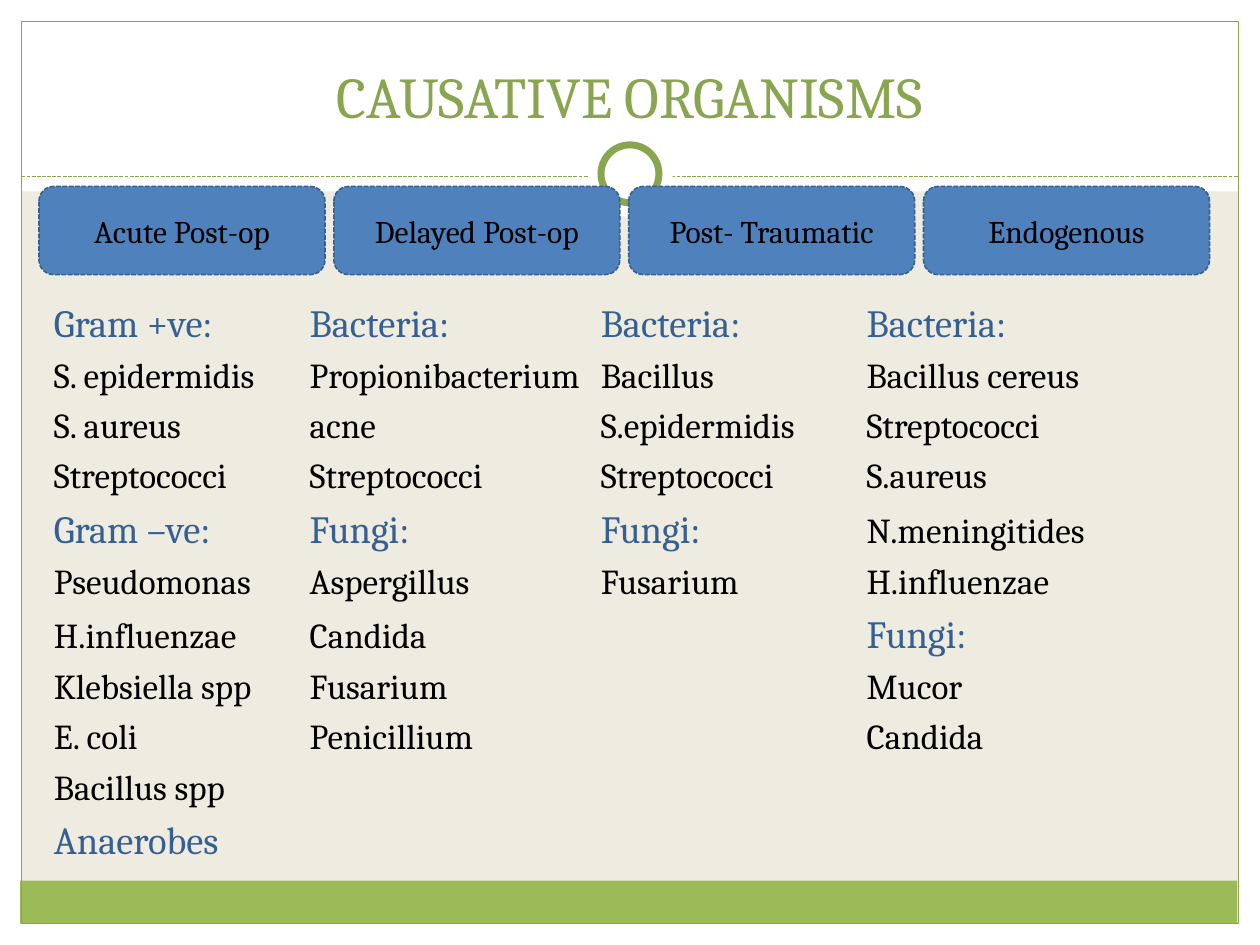
from lxml import etree
from pptx import Presentation
from pptx.dml.color import RGBColor
from pptx.enum.dml import MSO_LINE
from pptx.enum.shapes import MSO_CONNECTOR, MSO_SHAPE as Shape
from pptx.enum.text import MSO_ANCHOR as Anchor, PP_ALIGN as Align
from pptx.oxml.ns import qn
from pptx.util import Inches, Pt

GREEN, BAR_GREEN, BLUE = "89A54F", "9BBB59", "4F81BD"
EDGE_BLUE, HEADING_BLUE = "3A5F8C", "376092"
WHITE, BLACK, CREAM = "FFFFFF", "000000", "EEECE1"

CATEGORIES = ["Acute Post-op", "Delayed Post-op", "Post- Traumatic", "Endogenous"]
ORGANISMS = [
    ["Gram +ve:", "Bacteria:", "Bacteria:", "Bacteria:"],
    ["S. epidermidis", "Propionibacterium", "Bacillus", "Bacillus cereus"],
    ["S. aureus", "acne", "S.epidermidis", "Streptococci"],
    ["Streptococci", "Streptococci", "Streptococci", "S.aureus"],
    ["Gram –ve:", "Fungi:", "Fungi:", "N.meningitides"],
    ["Pseudomonas", "Aspergillus", "Fusarium", "H.influenzae"],
    ["H.influenzae", "Candida", "", "Fungi:"],
    ["Klebsiella spp", "Fusarium", "", "Mucor"],
    ["E. coli", "Penicillium", "", "Candida"],
    ["Bacillus spp"],
    ["Anaerobes"],
]
COLUMN_STOPS = [2.03, 4.34, 6.45]


def color(hex_code):
    return RGBColor.from_string(hex_code)


def is_heading(entry):
    return entry.endswith(":") or entry == "Anaerobes"


class SlideBuilder:
    font = "Cambria"

    def __init__(self, page):
        self.page = page
        page.background.fill.solid()
        page.background.fill.fore_color.rgb = color(CREAM)

    def stroke(self, line, hex_code, width, dashed=False):
        line.color.rgb = color(hex_code)
        line.width = Pt(width)
        if dashed:
            line.dash_style = MSO_LINE.SQUARE_DOT

    def shape(self, kind, left, top, width, height, fill=None):
        """Add a preset shape without shadow or outline."""
        shape = self.page.shapes.add_shape(
            kind, Inches(left), Inches(top), Inches(width), Inches(height))
        shape.shadow.inherit = False
        shape.line.fill.background()
        if fill:
            shape.fill.solid()
            shape.fill.fore_color.rgb = color(fill)
        else:
            shape.fill.background()
        return shape

    def dashed_line(self, left, right, y):
        line = self.page.shapes.add_connector(
            MSO_CONNECTOR.STRAIGHT, Inches(left), Inches(y), Inches(right), Inches(y))
        self.stroke(line.line, GREEN, 0.75, dashed=True)
        etree.SubElement(line._element.spPr, qn("a:effectLst"))

    def text_box(self, left, top, width, height, anchor):
        box = self.page.shapes.add_textbox(
            Inches(left), Inches(top), Inches(width), Inches(height))
        box.text_frame.word_wrap = True
        box.text_frame.vertical_anchor = anchor
        return box.text_frame

    def span(self, para, text, size, hex_code):
        span = para.add_run()
        span.text = text
        span.font.name = self.font
        span.font.size = Pt(size)
        span.font.color.rgb = color(hex_code)

    def title(self, text):
        frame = self.text_box(0.33, 0.25, 9.33, 0.83, Anchor.BOTTOM)
        para = frame.paragraphs[0]
        para.alignment = Align.CENTER
        self.span(para, text, 33, GREEN)

    def category(self, text, left):
        label = self.shape(Shape.ROUNDED_RECTANGLE, left, 1.48, 2.27, 0.7, BLUE)
        self.stroke(label.line, EDGE_BLUE, 0.9, dashed=True)
        label.text_frame.vertical_anchor = Anchor.MIDDLE
        para = label.text_frame.paragraphs[0]
        para.alignment = Align.CENTER
        self.span(para, text, 18, BLACK)

    def tab_stops(self, para, stops):
        tabs = etree.SubElement(para._p.get_or_add_pPr(), qn("a:tabLst"))
        for stop in stops:
            etree.SubElement(tabs, qn("a:tab"), pos=str(Inches(stop)), algn="l")

    def columns(self, rows, stops):
        """Set each row as one paragraph, its entries aligned on tab stops."""
        frame = self.text_box(0.33, 1.41, 9.3, 6.09, Anchor.TOP)
        frame.margin_top = Inches(0.96)
        for index, row in enumerate(rows):
            para = frame.paragraphs[0] if index == 0 else frame.add_paragraph()
            tall = any(is_heading(entry) for entry in row)
            para.space_before = Pt(0 if index == 0 else 5.2 if tall else 4.7)
            self.tab_stops(para, stops)
            for column, entry in enumerate(row):
                size, tint = (22, HEADING_BLUE) if is_heading(entry) else (20, BLACK)
                self.span(para, "\t" + entry if column else entry, size, tint)


def main():
    deck = Presentation()
    deck.slide_width, deck.slide_height = Inches(10), Inches(7.5)
    slide = SlideBuilder(deck.slides.add_slide(deck.slide_layouts[6]))

    for margin in [(0, 7.33, 10, 0.17), (0, 0, 10, 1.52),
                   (0, 0, 0.17, 7.5), (9.83, 0, 0.17, 7.5)]:
        slide.shape(Shape.RECTANGLE, *margin, WHITE)
    slide.shape(Shape.RECTANGLE, 0.16, 6.99, 9.66, 0.34, BAR_GREEN)
    border = slide.shape(Shape.RECTANGLE, 0.17, 0.17, 9.66, 7.16)
    slide.stroke(border.line, GREEN, 0.75)
    slide.dashed_line(0.17, 9.83, 1.4)
    slide.shape(Shape.OVAL, 4.67, 1.05, 0.67, 0.67, WHITE)
    ring = slide.shape(Shape.OVAL, 4.77, 1.15, 0.46, 0.46, WHITE)
    slide.stroke(ring.line, GREEN, 4)

    slide.title("CAUSATIVE ORGANISMS")
    slide.columns(ORGANISMS, COLUMN_STOPS)
    for index, name in enumerate(CATEGORIES):
        slide.category(name, 0.31 + index * 2.34)
    deck.save("out.pptx")


if __name__ == "__main__":
    main()
